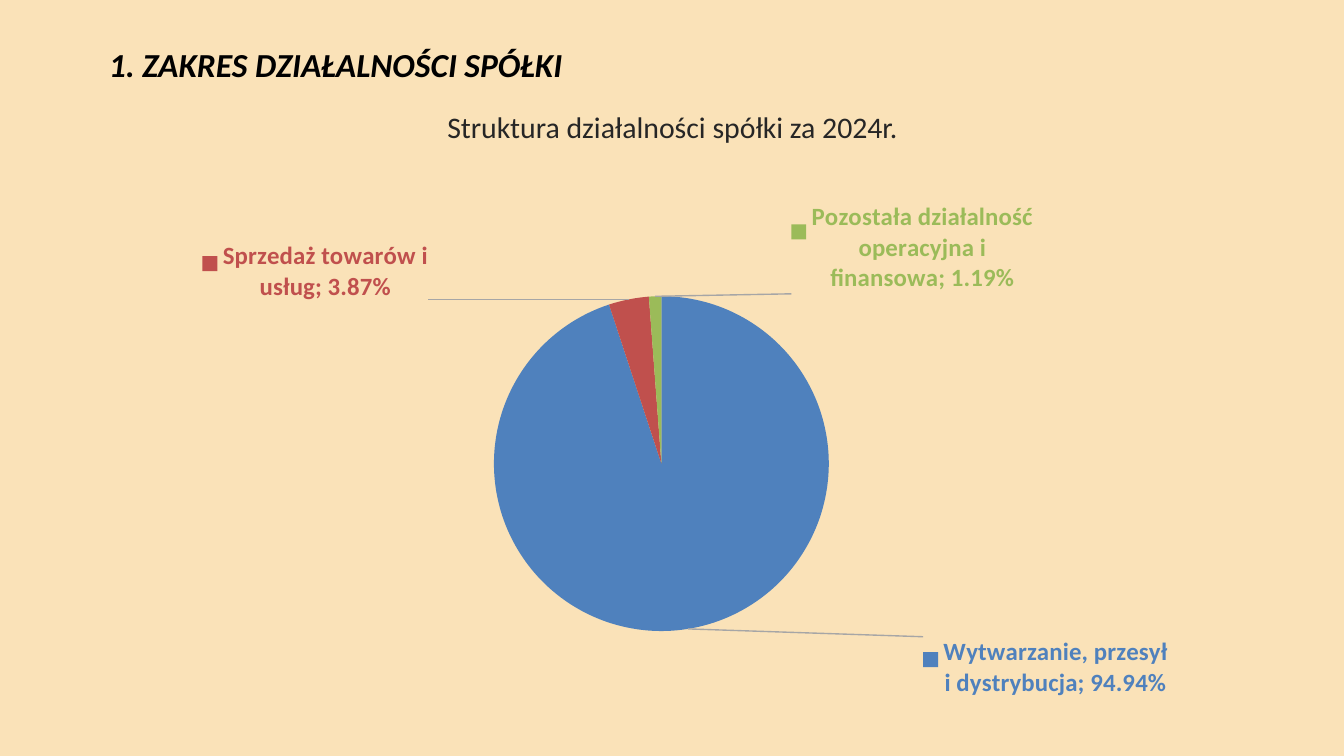
from lxml import etree
from pptx import Presentation
from pptx import util as u
from pptx.chart.data import CategoryChartData
from pptx.dml.color import RGBColor
from pptx.enum import chart as charts, text
from pptx.oxml import parse_xml
from pptx.oxml.ns import nsdecls, qn

COLORS = {
    "background": "FAE2B8", "title": "000000", "subtitle": "262626",
    "production": "4F81BD", "sales": "C0504D", "other": "9BBB59",
    "leader": "A6A6A6",
}
FONT = "Calibri"
ACTIVITIES = [
    ("Wytwarzanie, przesył i dystrybucja", 0.9494, "production", (0.2, 0)),
    ("Sprzedaż towarów i usług", 0.0387, "sales", (-0.17, 0.02)),
    ("Pozostała działalność operacyjna i finansowa", 0.0119, "other", (0.22, 0.01)),
]
PIE_AREA = {"x": 0.35, "y": 0.22, "w": 0.29, "h": 0.62}


def color(name):
    return RGBColor.from_string(COLORS[name])


def style_font(font, size, fill, bold=False, italic=False):
    font.name, font.size = FONT, u.Pt(size)
    font.bold, font.italic = bold, italic
    font.color.rgb = color(fill)


def place(box, left, top, width, height):
    box.left, box.top = u.Inches(left), u.Inches(top)
    box.width, box.height = u.Inches(width), u.Inches(height)


def write(box, content, align=text.PP_ALIGN.LEFT, **style):
    frame = box.text_frame
    frame.word_wrap = True
    frame.auto_size = text.MSO_AUTO_SIZE.NONE
    frame.vertical_anchor = text.MSO_ANCHOR.TOP
    para = frame.paragraphs[0]
    para.alignment = align
    span = para.add_run()
    span.text = content
    style_font(span.font, **style)


def manual_layout(**values):
    modes = '<c:layoutTarget val="inner"/><c:xMode val="edge"/><c:yMode val="edge"/>'
    head = modes if "w" in values else ""
    body = "".join(f'<c:{key} val="{value}"/>' for key, value in values.items())
    return parse_xml(f'<c:layout {nsdecls("c")}><c:manualLayout>{head}{body}'
                     '</c:manualLayout></c:layout>')


def set_label(series, index, fill, offset):
    label = series.points[index].data_label
    style_font(label.font, 13.3, fill, bold=True)
    label.position = charts.XL_LABEL_POSITION.OUTSIDE_END
    node = series._element.xpath(f"c:dLbls/c:dLbl[c:idx/@val='{index}']")[0]
    node.find(qn("c:idx")).addnext(manual_layout(x=offset[0], y=offset[1]))
    number = parse_xml(f'<c:numFmt {nsdecls("c")} formatCode="0.00%" sourceLinked="0"/>')
    node.find(qn("c:layout")).addnext(number)
    shown = {"LegendKey": 1, "Val": 1, "CatName": 1, "SerName": 0, "Percent": 0}
    for part, value in shown.items():
        node.find(qn(f"c:show{part}")).set("val", str(value))
    separator = etree.SubElement(node, qn("c:separator"))
    separator.text = "; "


def add_leader_lines(series):
    labels = series.data_labels
    labels.number_format, labels.number_format_is_linked = "0.00%", False
    labels.show_value = labels.show_category_name = labels.show_legend_key = True
    node = series._element.find(qn("c:dLbls"))
    for old in node.findall(qn("c:showLeaderLines")):
        node.remove(old)
    etree.SubElement(node, qn("c:showLeaderLines")).set("val", "1")
    node.append(parse_xml(
        f'<c:leaderLines {nsdecls("c", "a")}><c:spPr><a:ln w="9525"><a:solidFill>'
        f'<a:srgbClr val="{COLORS["leader"]}"/></a:solidFill></a:ln></c:spPr></c:leaderLines>'))


def add_pie(page, left, top, width, height):
    data = CategoryChartData(number_format="0.00%")
    data.categories = [activity[0] for activity in ACTIVITIES]
    data.add_series("Series 1", [activity[1] for activity in ACTIVITIES])
    area = [u.Inches(value) for value in (left, top, width, height)]
    pie = page.shapes.add_chart(charts.XL_CHART_TYPE.PIE, *area, data).chart
    pie.has_legend = pie.has_title = False
    style_font(pie.font, 10, "title")
    plot = pie.plots[0]
    plot.vary_by_categories = True
    series = plot.series[0]
    for index, (_, _, fill, offset) in enumerate(ACTIVITIES):
        point = series.points[index]
        point.format.fill.solid()
        point.format.fill.fore_color.rgb = color(fill)
        point.format.line.fill.background()
        set_label(series, index, fill, offset)
    add_leader_lines(series)
    plot_area = pie._chartSpace.chart.plotArea
    for old in plot_area.findall(qn("c:layout")):
        plot_area.remove(old)
    plot_area.insert(0, manual_layout(**PIE_AREA))


def main():
    """Build the slide about the company's structure of activity."""
    deck = Presentation()
    deck.slide_width = u.Inches(10)
    deck.slide_height = deck.slide_width * 9 // 16
    page = deck.slides.add_slide(deck.slide_layouts[5])
    page.background.fill.solid()
    page.background.fill.fore_color.rgb = color("background")
    title = page.shapes.title
    place(title, 0.71, 0.28, 8.5, 0.47)
    write(title, "1. ZAKRES DZIAŁALNOŚCI SPÓŁKI", size=18, fill="title",
          bold=True, italic=True)
    add_pie(page, 0.61, 1.32, 8.71, 4.02)
    box = page.shapes.add_textbox(*[u.Inches(value) for value in (0.83, 0.76, 8.35, 0.37)])
    write(box, "Struktura działalności spółki za 2024r.",
          align=text.PP_ALIGN.CENTER, size=16, fill="subtitle")
    deck.save("out.pptx")


if __name__ == "__main__":
    main()
